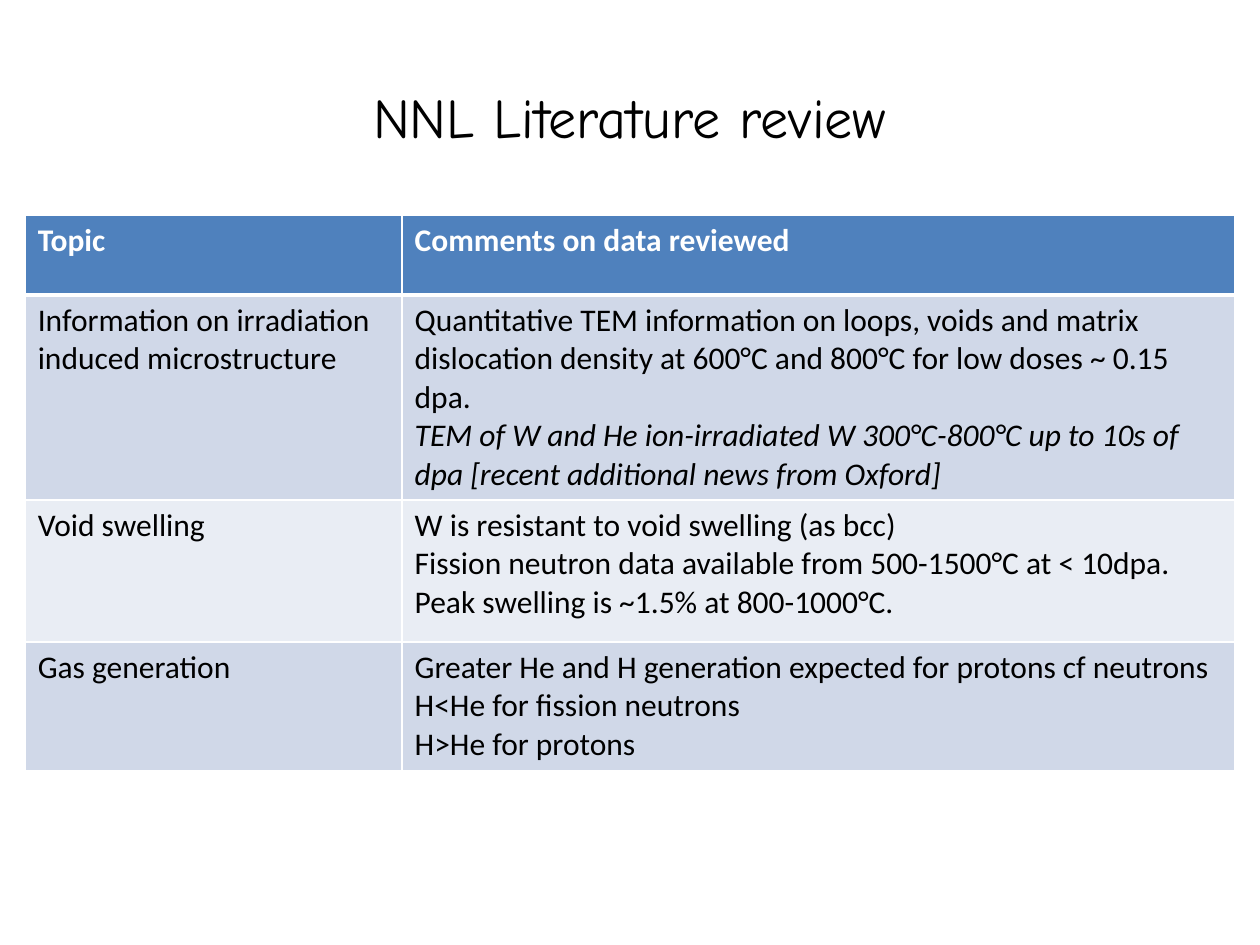
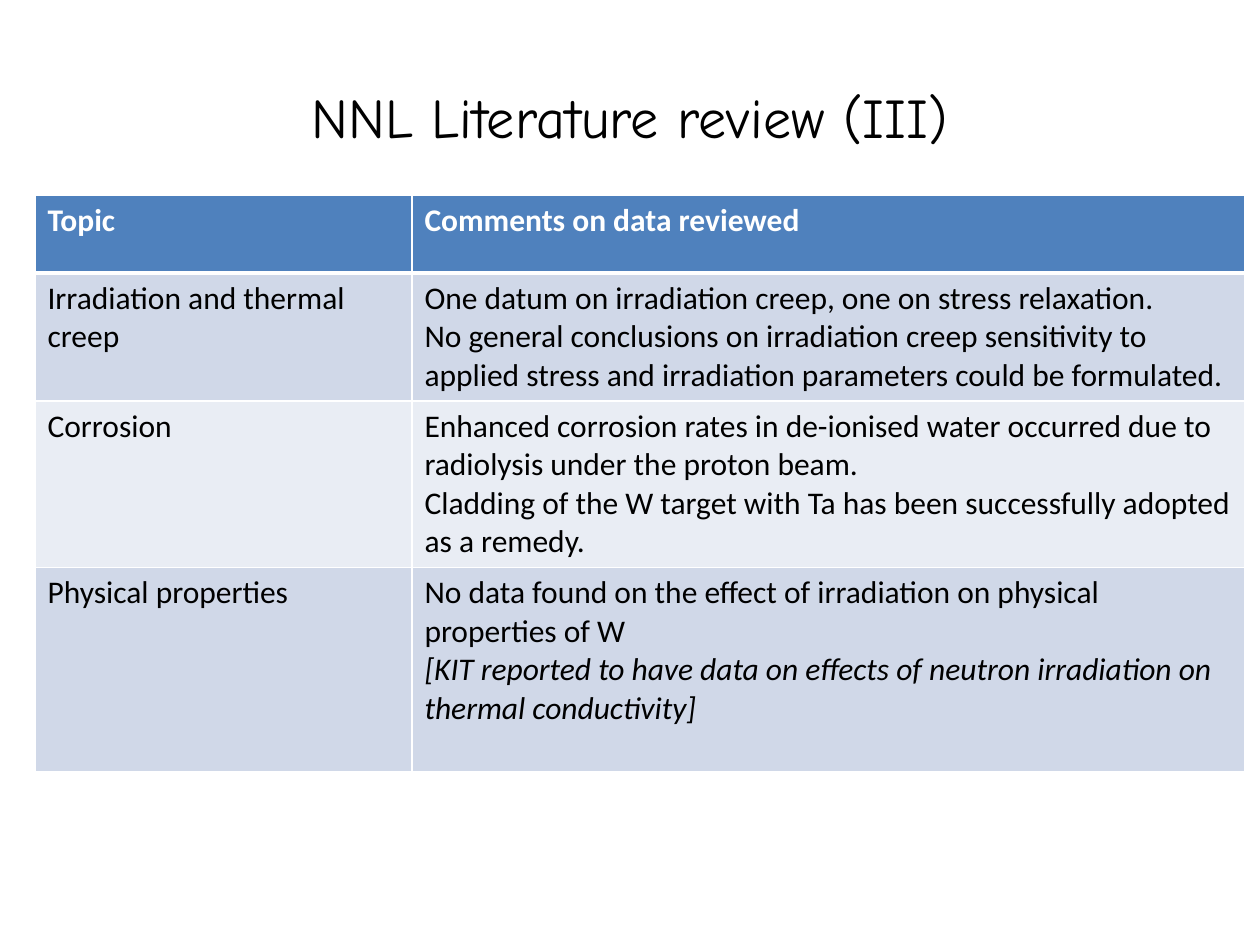
from lxml import etree
from pptx import Presentation
from pptx.dml.color import RGBColor
from pptx.enum.text import MSO_ANCHOR, PP_ALIGN
from pptx.oxml.ns import qn
from pptx.util import Pt

HEADER = ("Topic", ["Comments on data reviewed"], [])

REVIEWS = [
    {
        "title": "NNL Literature review",
        "left": 14.4,
        "top": 122.8,
        "row_heights": (45.8, 116.6, 81.2, 73.6),
        "rows": [
            (
                "Information on irradiation induced microstructure",
                ["Quantitative TEM information on loops, voids and matrix dislocation "
                 "density at 600°C and 800°C for low doses ~ 0.15 dpa."],
                ["TEM of W and He ion-irradiated W 300°C-800°C up to 10s of dpa "
                 "[recent additional news from Oxford]"],
            ),
            (
                "Void swelling",
                ["W is resistant to void swelling (as bcc)",
                 "Fission neutron data available from 500-1500°C at < 10dpa.",
                 "Peak swelling is ~1.5% at 800-1000°C."],
                [],
            ),
            (
                "Gas generation",
                ["Greater He and H generation expected for protons cf neutrons",
                 "H<He for fission neutrons",
                 "H>He for protons"],
                [],
            ),
        ],
    },
    {
        "title": "NNL Literature review (III)",
        "left": 20,
        "top": 111.4,
        "row_heights": (44.6, 73.2, 94.8, 117),
        "rows": [
            (
                "Irradiation and thermal creep",
                ["One datum on irradiation creep, one on stress relaxation.",
                 "No general conclusions on irradiation creep sensitivity to applied "
                 "stress and irradiation parameters could be formulated."],
                [],
            ),
            (
                "Corrosion",
                ["Enhanced corrosion rates in de-ionised water occurred due to "
                 "radiolysis under the proton beam.",
                 "Cladding of the W target with Ta has been successfully adopted "
                 "as a remedy."],
                [],
            ),
            (
                "Physical properties",
                ["No data found on the effect of irradiation on physical properties of W"],
                ["[KIT reported to have data on effects of neutron irradiation on "
                 "thermal conductivity]"],
            ),
        ],
    },
]

BLACK = RGBColor(0x00, 0x00, 0x00)
WHITE = RGBColor(0xFF, 0xFF, 0xFF)
HEADER_BLUE = RGBColor(0x4F, 0x81, 0xBD)
BANDS = (RGBColor(0xE9, 0xED, 0xF4), RGBColor(0xD0, 0xD8, 0xE8))

TITLE_FONT = "Comic Neue"
TABLE_FONT = "Calibri"
CENTER = PP_ALIGN.CENTER
MIDDLE = MSO_ANCHOR.MIDDLE
TITLE_ONLY = 5
COLUMN_WIDTHS = (215.4, 475.8)
BORDER_SIDES = ("a:lnL", "a:lnR", "a:lnT", "a:lnB")


def set_font(paragraph, name, size, color, bold=False, italic=False):
    font = paragraph.font
    font.name, font.size = name, Pt(size)
    font.bold, font.italic = bold, italic
    font.color.rgb = color


def add_title(slide, text):
    title = slide.shapes.title
    title.left, title.top, title.width, title.height = Pt(36), Pt(21.6), Pt(648), Pt(90)
    title.text_frame.text = text
    title.text_frame.vertical_anchor = MIDDLE
    paragraph = title.text_frame.paragraphs[0]
    paragraph.alignment = CENTER
    set_font(paragraph, TITLE_FONT, 32, BLACK)


def set_borders(cell, widths):
    properties = cell._tc.get_or_add_tcPr()
    for side, width in zip(BORDER_SIDES, widths):
        line = etree.SubElement(properties, qn(side), w=str(Pt(width)))
        fill = etree.SubElement(line, qn("a:solidFill"))
        etree.SubElement(fill, qn("a:srgbClr"), val=str(WHITE))


def fill_cell(cell, lines, asides, row):
    is_header = row == 0
    top = 3 if row == 1 else 1
    bottom = 3 if is_header else 1
    set_borders(cell, (1, 1, top, bottom))
    cell.fill.solid()
    cell.fill.fore_color.rgb = HEADER_BLUE if is_header else BANDS[row % 2]
    cell.text_frame.text = "\n".join(lines + asides)
    for index, paragraph in enumerate(cell.text_frame.paragraphs):
        set_font(paragraph, TABLE_FONT, 18, WHITE if is_header else BLACK,
                 bold=is_header, italic=index >= len(lines))


def add_review_table(slide, review):
    rows = [HEADER] + review["rows"]
    heights = review["row_heights"]
    table = slide.shapes.add_table(
        len(rows), len(COLUMN_WIDTHS), Pt(review["left"]), Pt(review["top"]),
        Pt(sum(COLUMN_WIDTHS)), Pt(sum(heights))).table
    table.horz_banding = False
    for column, width in zip(table.columns, COLUMN_WIDTHS):
        column.width = Pt(width)
    for index, (topic, comments, asides) in enumerate(rows):
        table.rows[index].height = Pt(heights[index])
        fill_cell(table.cell(index, 0), [topic], [], index)
        fill_cell(table.cell(index, 1), comments, asides, index)


def main():
    deck = Presentation()
    deck.slide_width, deck.slide_height = Pt(720), Pt(540)
    for review in REVIEWS:
        slide = deck.slides.add_slide(deck.slide_layouts[TITLE_ONLY])
        add_title(slide, review["title"])
        add_review_table(slide, review)
    deck.save("out.pptx")


if __name__ == "__main__":
    main()
